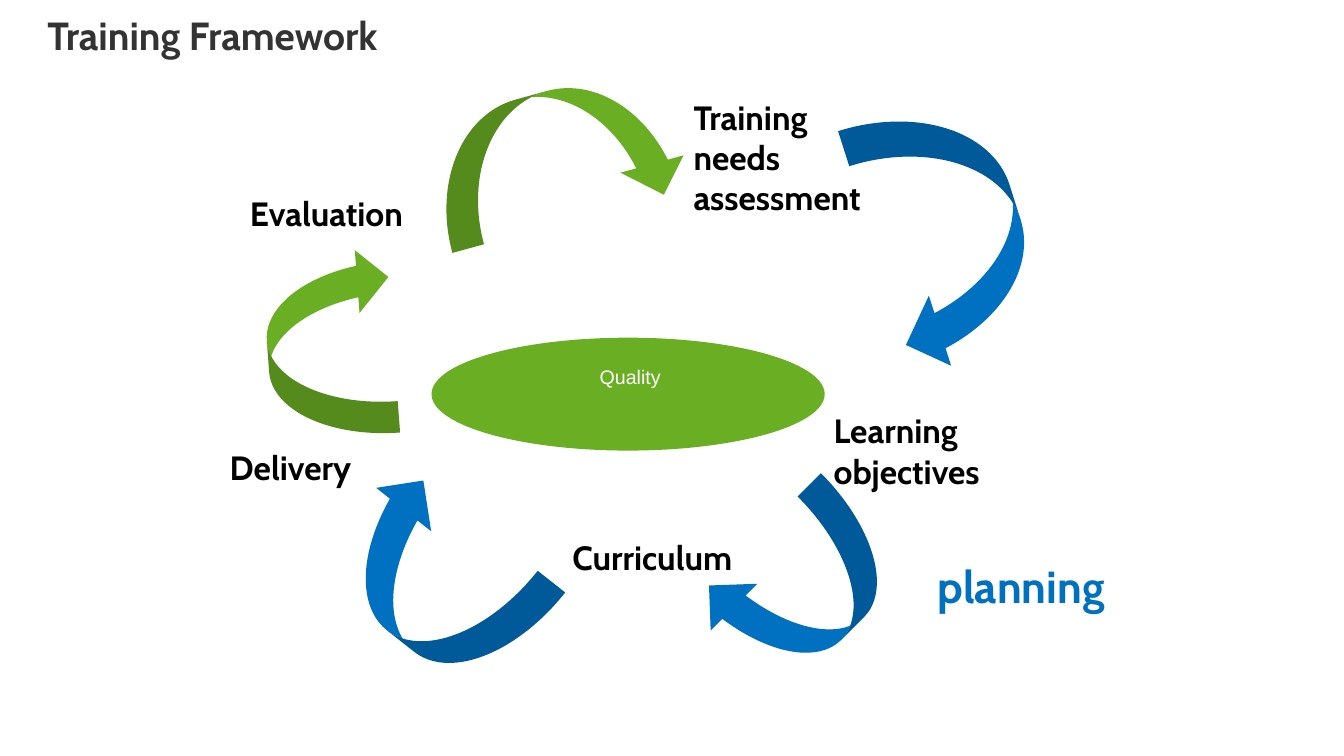
import pptx
import pptx.dml.color
import pptx.enum.shapes
import pptx.enum.text
import pptx.util

Inches = pptx.util.Inches
Pt = pptx.util.Pt
RGB = pptx.dml.color.RGBColor.from_string
SHAPE = pptx.enum.shapes.MSO_SHAPE
ALIGN = pptx.enum.text.PP_ALIGN

THEME = {
    "green": "69AE23", "blue": "0070C0", "black": "000000",
    "white": "FFFFFF", "grey": "333333",
    "title": 28, "stage": 24, "phase": 32, "core": 14,
}


def write(tf, text, size="stage", color="black", font="Cabin", bold=True, align=ALIGN.LEFT):
    tf.word_wrap = True
    tf.vertical_anchor = pptx.enum.text.MSO_ANCHOR.TOP
    p = tf.paragraphs[0]
    p.alignment = align
    r = p.add_run()
    r.text = text
    r.font.name = font
    r.font.size = Pt(THEME[size])
    r.font.bold = bold
    r.font.color.rgb = RGB(THEME[color])
    return p


def add_shape(kind, box, color, rotation=0):
    sp = s.shapes.add_shape(kind, *map(Inches, box))
    sp.rotation = rotation
    sp.shadow.inherit = False
    sp.fill.solid()
    sp.fill.fore_color.rgb = RGB(THEME[color])
    sp.line.fill.background()


prs = pptx.Presentation()
prs.slide_width = Inches(13.33)
prs.slide_height = Inches(7.5)
s = prs.slides.add_slide(prs.slide_layouts[5])

title = s.shapes.title
title.left, title.top, title.width, title.height = map(Inches, (0.47, 0.16, 11.28, 0.9))
tf = title.text_frame
tf.auto_size = pptx.enum.text.MSO_AUTO_SIZE.NONE
tf.margin_left = tf.margin_top = tf.margin_right = tf.margin_bottom = 0
p = write(tf, "Training Framework", size="title", color="grey")
p.line_spacing = 0.9

add_shape(SHAPE.OVAL, (4.28, 3.35, 3.9, 1.12), "green")

arrows = [
    ((8.67, 1.02, 1.46, 2.59), "blue", 342.4),
    ((7.28, 4.88, 1.31, 1.9), "blue", 44.9),
    ((4.87, 0.3, 1.3, 2.5), "green", 254.6),
    ((3.64, 4.69, 1.39, 2.14), "blue", 128.3),
    ((2.65, 2.48, 1.25, 1.86), "green", 175.7),
]
for box, color, rotation in arrows:
    add_shape(SHAPE.CURVED_LEFT_ARROW, box, color, rotation)

labels = [
    ("Training needs assessment", (6.78, 0.91, 2.25, 1.31), {}),
    ("Learning objectives", (8.17, 4.02, 2.5, 0.91), {}),
    ("Curriculum", (5.58, 5.28, 2.87, 0.51), {}),
    ("Delivery", (2.18, 4.38, 2.95, 0.51), {}),
    ("Evaluation", (2.38, 1.86, 2.95, 0.51), {}),
    ("planning", (9.2, 5.49, 2.17, 0.64), {"size": "phase", "color": "blue"}),
    ("Quality", (4.59, 3.57, 3.32, 0.34),
     {"size": "core", "color": "white", "font": "Arial", "bold": False, "align": ALIGN.CENTER}),
]
for text, box, style in labels:
    sp = s.shapes.add_textbox(*map(Inches, box))
    write(sp.text_frame, text, **style)

prs.save("out.pptx")
